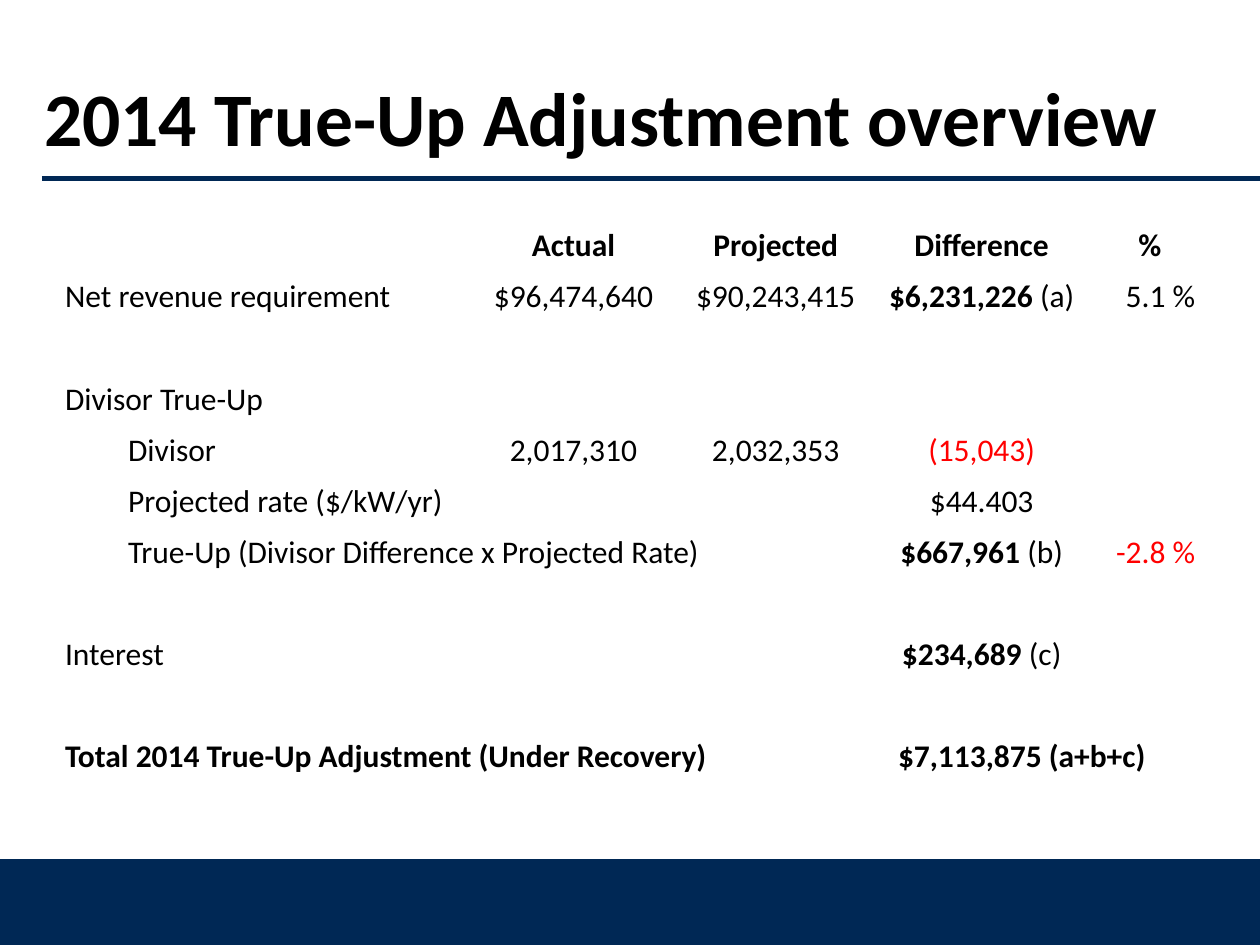
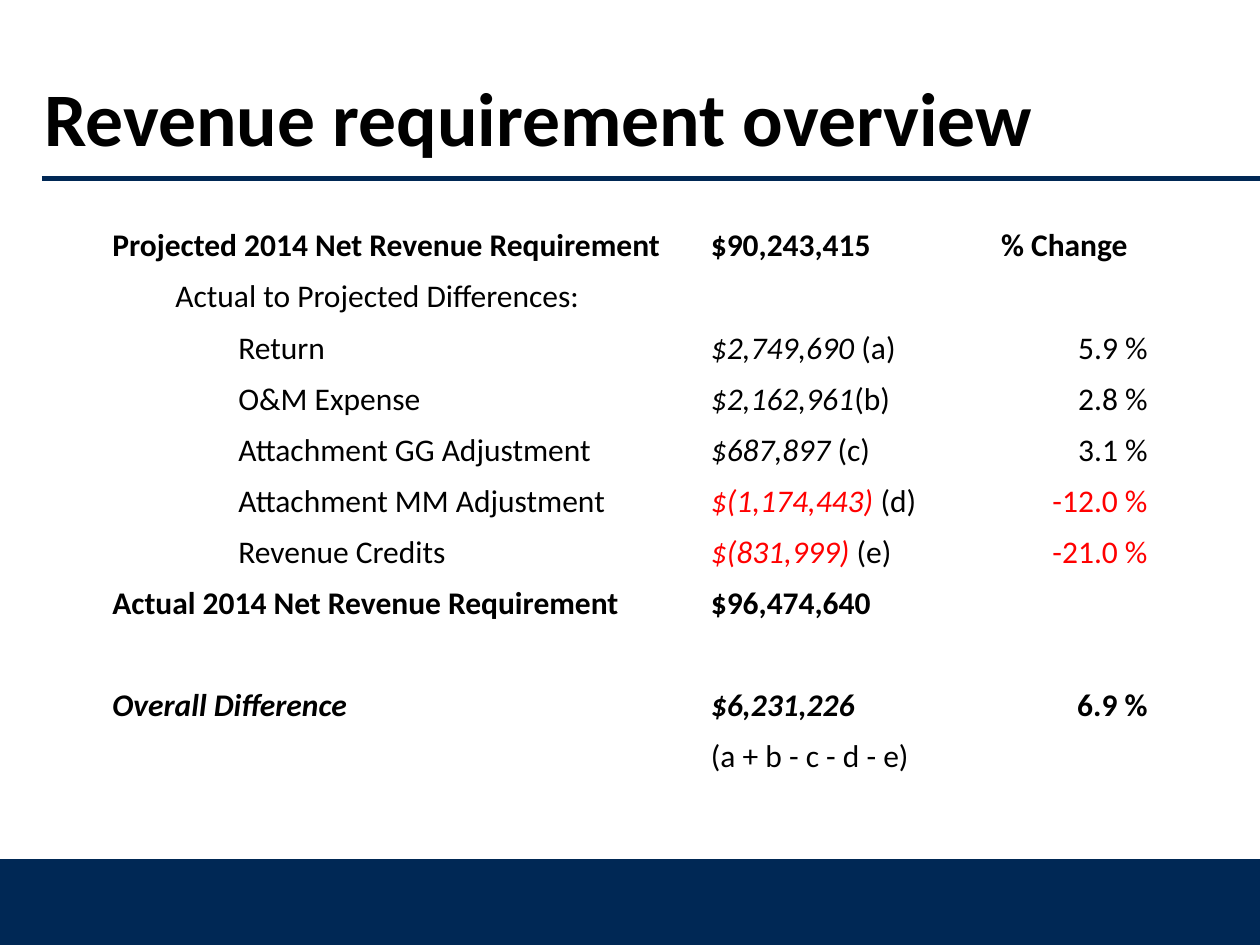
from dataclasses import dataclass

from lxml.etree import SubElement
from pptx import Presentation
from pptx.dml.color import RGBColor
from pptx.enum.shapes import MSO_CONNECTOR, MSO_SHAPE
from pptx.enum.text import MSO_ANCHOR, MSO_AUTO_SIZE, PP_ALIGN
from pptx.oxml.ns import qn
from pptx.util import Pt


@dataclass(frozen=True)
class Theme:
    navy: RGBColor = RGBColor(0x00, 0x28, 0x55)
    ink: RGBColor = RGBColor(0x00, 0x00, 0x00)
    negative: RGBColor = RGBColor(0xFF, 0x00, 0x00)
    font: str = "Calibri"
    title_size: float = 43.2
    body_size: float = 18
    row_height: float = 29.2
    level_indent: float = 36


@dataclass(frozen=True)
class Box:
    left: float
    top: float
    width: float
    height: float


@dataclass(frozen=True)
class Entry:
    column: int
    spans: tuple
    align: PP_ALIGN = PP_ALIGN.LEFT
    level: int = 0
    indent: float = 0


THEME = Theme()
PAGE = Box(0, 0, 720, 540)
BAND = Box(0, 492, 720, 48)
RULE = Box(24, 102, 696, 0)


def as_spans(content, style):
    return ((content, style),) if isinstance(content, str) else content


def label(text, style="", level=0):
    return Entry(0, as_spans(text, style), level=level,
                 indent=level * THEME.level_indent)


def left(column, content, style="", indent=0):
    return Entry(column, as_spans(content, style), indent=indent)


def center(column, content, style=""):
    return Entry(column, as_spans(content, style), PP_ALIGN.CENTER)


def right(column, content, style=""):
    return Entry(column, as_spans(content, style), PP_ALIGN.RIGHT)


def noted(amount, note, style):
    return (amount, style), (note, "")


def format_font(font, size, style=""):
    font.name = THEME.font
    font.size = Pt(size)
    font.bold = "b" in style
    font.italic = "i" in style
    font.color.rgb = THEME.negative if "-" in style else THEME.ink


def add_band(page, box):
    band = page.shapes.add_shape(MSO_SHAPE.RECTANGLE, Pt(box.left), Pt(box.top),
                                 Pt(box.width), Pt(box.height))
    band.shadow.inherit = False
    band.fill.solid()
    band.fill.fore_color.rgb = THEME.navy
    band.line.color.rgb = THEME.navy
    band.line.width = Pt(2)


def add_rule(page, box):
    rule = page.shapes.add_connector(
        MSO_CONNECTOR.STRAIGHT, Pt(box.left), Pt(box.top),
        Pt(box.left + box.width), Pt(box.top + box.height))
    rule.line.color.rgb = THEME.navy
    rule.line.width = Pt(3)
    SubElement(rule.element.spPr, qn("a:effectLst"))


def set_title(page, text, box):
    title = page.shapes.title
    title.left, title.top = Pt(box.left), Pt(box.top)
    title.width, title.height = Pt(box.width), Pt(box.height)
    frame = title.text_frame
    frame.text = text
    frame.auto_size = MSO_AUTO_SIZE.NONE
    frame.vertical_anchor = MSO_ANCHOR.MIDDLE
    para = frame.paragraphs[0]
    para.alignment = PP_ALIGN.LEFT
    format_font(para.runs[0].font, THEME.title_size, "b")


def fill_cell(cell, entry):
    para = cell.text_frame.paragraphs[0]
    para.alignment = entry.align
    para.level = entry.level
    if entry.indent:
        properties = para._p.get_or_add_pPr()
        properties.set("marL", str(Pt(entry.indent)))
        properties.set("indent", "0")
    for text, style in entry.spans:
        span = para.add_run()
        span.text = text
        format_font(span.font, THEME.body_size, style)


def add_statement(page, box, widths, rows, merges=()):
    table = page.shapes.add_table(len(rows), len(widths), Pt(box.left), Pt(box.top),
                                  Pt(box.width), Pt(box.height)).table
    table.first_row = False
    table.horz_banding = False
    for column, width in zip(table.columns, widths):
        column.width = Pt(width)
    for row in table.rows:
        row.height = Pt(box.height / len(rows))
    for cell in table.iter_cells():
        cell.fill.background()
    for row, first, last in merges:
        table.cell(row, first).merge(table.cell(row, last))
    for row, entries in enumerate(rows):
        for entry in entries:
            fill_cell(table.cell(row, entry.column), entry)


def add_page(deck, title, title_width):
    page = deck.slides.add_slide(deck.slide_layouts[5])
    add_band(page, BAND)
    add_rule(page, RULE)
    set_title(page, title, Box(18, 21.6, title_width, 90))
    return page


def add_true_up_page(deck):
    page = add_page(deck, "2014 True-Up Adjustment overview", 660)
    rows = [
        [center(2, "Actual", "b"), center(4, "Projected", "b"),
         center(5, "Difference", "b"), center(6, "%", "b")],
        [label("Net revenue requirement"), center(2, "$96,474,640"),
         center(4, "$90,243,415"), center(5, noted("$6,231,226 ", "(a)", "b")),
         right(6, "5.1 %")],
        [],
        [label("Divisor True-Up")],
        [label("Divisor", level=1), center(2, "2,017,310"),
         center(4, "2,032,353"), center(5, "(15,043)", "-")],
        [label("Projected rate ($/kW/yr)", level=1), center(5, "$44.403")],
        [label("True-Up (Divisor Difference x Projected Rate)", level=1),
         center(5, noted("$667,961 ", "(b)", "b")), right(6, "-2.8 %", "-")],
        [],
        [label("Interest"), center(5, noted("$234,689 ", "(c)", "b"))],
        [],
        [label("Total 2014 True-Up Adjustment (Under Recovery)", "b"),
         left(5, "$7,113,875 (a+b+c)", "b", indent=8)],
    ]
    paired = [(row, first, first + 1) for row in range(5) for first in (0, 2)]
    shifted = [(row, first, first + 1) for row in (7, 8, 9) for first in (1, 3)]
    wide = [(5, 0, 3), (6, 0, 4), (10, 0, 4), (10, 5, 6)]
    widths = [165.6, 71.3, 35.3, 86.4, 109.4, 126, 66.2]
    box = Box(30, 126, sum(widths), len(rows) * THEME.row_height)
    add_statement(page, box, widths, rows, paired + shifted + wide)


def add_revenue_page(deck):
    page = add_page(deck, "Revenue requirement overview", 624)
    differences = [
        ("Return", "$2,749,690 ", "(a)", "5.9 %", ""),
        ("O&M Expense", "$2,162,961", "(b)", "2.8 %", ""),
        ("Attachment GG Adjustment", "$687,897 ", "(c)", "3.1 %", ""),
        ("Attachment MM Adjustment", "$(1,174,443) ", "(d)", "-12.0 %", "-"),
        ("Revenue Credits", "$(831,999) ", "(e)", "-21.0 %", "-"),
    ]
    rows = [
        [label("Projected 2014 Net Revenue Requirement", "b"),
         left(1, "$90,243,415", "b"), center(2, "% Change", "b")],
        [label("Actual to Projected Differences:", level=1)],
        *[[label(name, level=2), left(1, noted(amount, note, "i" + sign)),
           right(2, change, sign)]
          for name, amount, note, change, sign in differences],
        [label("Actual 2014 Net Revenue Requirement", "b"),
         left(1, "$96,474,640", "b")],
        [],
        [label("Overall Difference", "bi"), left(1, "$6,231,226", "bi"),
         right(2, "6.9 %", "b")],
        [left(1, "(a + b - c - d - e)")],
    ]
    widths = [342, 154.4, 109.6]
    box = Box(57, 126, sum(widths), len(rows) * THEME.row_height)
    add_statement(page, box, widths, rows)


def main():
    deck = Presentation()
    deck.slide_width, deck.slide_height = Pt(PAGE.width), Pt(PAGE.height)
    add_true_up_page(deck)
    add_revenue_page(deck)
    deck.save("out.pptx")


if __name__ == "__main__":
    main()
